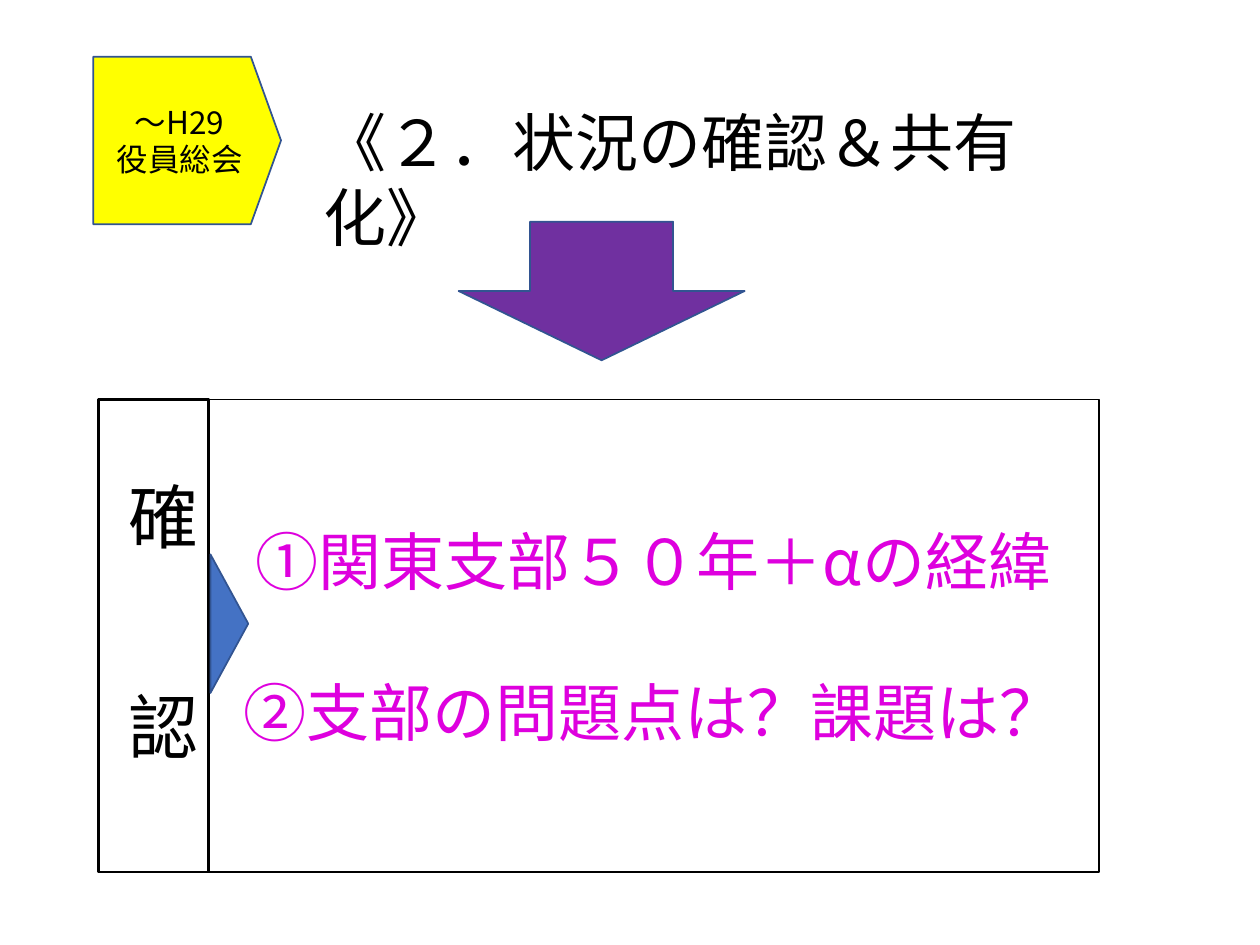
from dataclasses import dataclass

from pptx import Presentation
from pptx.dml.color import RGBColor
from pptx.enum import shapes, text
from pptx.oxml.ns import qn
from pptx.util import Inches, Pt

KIND = shapes.MSO_SHAPE
ALIGN = text.PP_ALIGN
ANCHOR = text.MSO_ANCHOR


@dataclass(frozen=True)
class Theme:
    font: str = "Noto Sans CJK JP"
    ink: str = "000000"
    accent: str = "DE00DE"
    blue: str = "4472C4"
    edge: str = "325491"
    purple: str = "7030A0"
    yellow: str = "FFFF00"
    small: int = 18
    large: int = 36
    label: int = 40


class Deck:
    """Holds the theme and the current slide."""

    def __init__(self, theme):
        self.theme = theme
        self.prs = Presentation()
        self.prs.slide_width, self.prs.slide_height = Inches(10), Inches(7.5)
        self.slide = self.prs.slides.add_slide(self.prs.slide_layouts[1])

    def place(self, item, box):
        names = ("left", "top", "width", "height")
        for name, value in zip(names, box):
            setattr(item, name, Inches(value))

    def paint(self, item, fill, line, weight):
        if fill:
            item.fill.solid()
            item.fill.fore_color.rgb = RGBColor.from_string(fill)
        else:
            item.fill.background()
        item.line.color.rgb = RGBColor.from_string(line)
        item.line.width = Pt(weight)

    def words(self, item, lines, size, color, align=ALIGN.CENTER,
              anchor=ANCHOR.MIDDLE, gap=0):
        frame = item.text_frame
        frame.text = "\n".join(lines)
        style = {"word_wrap": True, "auto_size": text.MSO_AUTO_SIZE.NONE,
                 "vertical_anchor": anchor}
        for name, value in style.items():
            setattr(frame, name, value)
        for i, para in enumerate(frame.paragraphs):
            para.alignment = align
            para.space_before = Pt(gap if i else 0)
            run = para.runs[0]
            look = {"name": self.theme.font, "size": Pt(size)}
            for name, value in look.items():
                setattr(run.font, name, value)
            run.font.color.rgb = RGBColor.from_string(color)
            props = run._r.get_or_add_rPr()
            east = props.makeelement(qn("a:ea"), {"typeface": self.theme.font})
            props.find(qn("a:latin")).addnext(east)

    def title(self, line, box):
        item = self.slide.shapes.title
        self.place(item, box)
        self.words(item, [line], self.theme.large, self.theme.ink,
                   ALIGN.LEFT, ANCHOR.TOP)

    def body(self, lines, box, gap):
        item = self.slide.placeholders[1]
        self.place(item, box)
        self.paint(item, None, self.theme.ink, 1)
        self.words(item, lines, self.theme.large, self.theme.accent, gap=gap)
        # Numbers are part of the wording, so no bullets or indents
        for para in item.text_frame.paragraphs:
            props = para._p.get_or_add_pPr()
            props.set("marL", "0")
            props.set("indent", "0")
            props.append(props.makeelement(qn("a:buNone"), {}))

    def shape(self, kind, box, fill=None, line=None, weight=1, turn=0):
        item = self.slide.shapes.add_shape(kind, *map(Inches, box))
        item.shadow.inherit = False
        item.rotation = turn
        self.paint(item, fill, line or self.theme.edge, weight)
        return item


def main():
    theme = Theme()
    deck = Deck(theme)
    top, high = 3.17, 3.75

    # Heading and the points to confirm
    deck.title("《２．状況の確認＆共有化》", (2.47, 0.77, 5.89, 0.71))
    deck.body(["①関東支部５０年＋αの経緯", "②支部の問題点は？課題は？"],
              (1.65, top, 7.07, high), gap=43)

    # Vertical label with its pointer
    label = deck.shape(KIND.RECTANGLE, (0.78, top, 0.88, high),
                       line=theme.ink, weight=1.5)
    deck.words(label, ["　確　　認"], theme.label, theme.ink,
               ALIGN.LEFT, ANCHOR.TOP)
    label.text_frame._txBody.bodyPr.set("vert", "eaVert")
    deck.shape(KIND.ISOSCELES_TRIANGLE, (1.27, 4.8, 1.1, 0.3),
               theme.blue, turn=90)

    # Flow arrow and period tag
    deck.shape(KIND.DOWN_ARROW, (3.64, 1.76, 2.27, 1.1), theme.purple)
    tag = deck.shape(KIND.PENTAGON, (0.74, 0.45, 1.49, 1.33), theme.yellow)
    tag.adjustments[0] = 0.18
    deck.words(tag, ["～H29", "役員総会"], theme.small, theme.ink)

    deck.prs.save("out.pptx")


if __name__ == "__main__":
    main()
